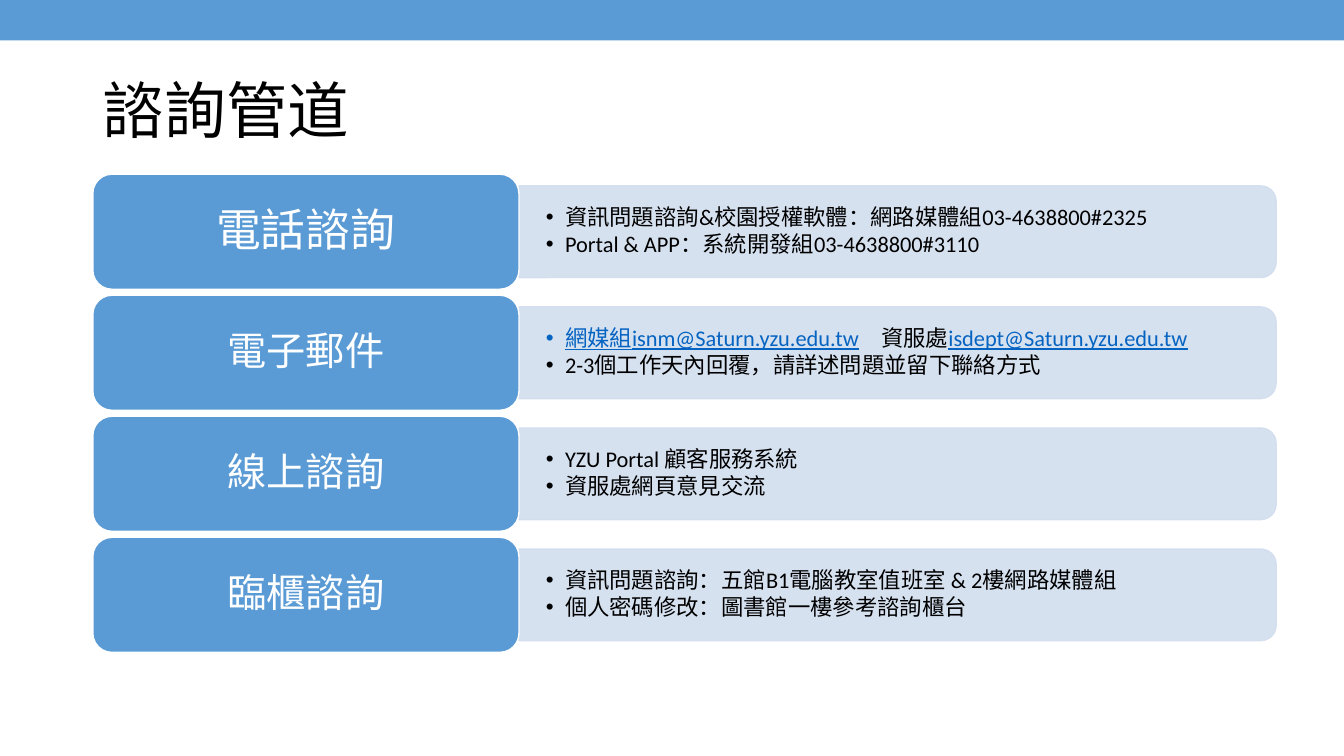
from lxml.etree import SubElement
from pptx import Presentation
from pptx.dml.color import RGBColor
from pptx.enum.shapes import MSO_SHAPE
from pptx.enum.text import MSO_ANCHOR, MSO_AUTO_SIZE, PP_ALIGN
from pptx.oxml.ns import qn
from pptx.util import Cm, Pt

COLORS = {
    "blue": "5B9BD5",
    "pale": "D2DEEF",
    "link": "0563C1",
    "black": "000000",
    "white": "FFFFFF",
}

# Each channel: name, label size, list lines; a line is a list of (text, is_link).
CHANNELS = [
    ("電話諮詢", 32, [
        [("資訊問題諮詢&校園授權軟體：網路媒體組03-4638800#2325", False)],
        [("Portal & APP：系統開發組03-4638800#3110", False)],
    ]),
    ("電子郵件", 28, [
        [("網媒組isnm@Saturn.yzu.edu.tw", True), ("　資服處", False),
         ("isdept@Saturn.yzu.edu.tw", True)],
        [("2-3個工作天內回覆，請詳述問題並留下聯絡方式", False)],
    ]),
    ("線上諮詢", 28, [
        [("YZU Portal 顧客服務系統", False)],
        [("資服處網頁意見交流", False)],
    ]),
    ("臨櫃諮詢", 28, [
        [("資訊問題諮詢：五館B1電腦教室值班室 & 2樓網路媒體組", False)],
        [("個人密碼修改：圖書館一樓參考諮詢櫃台", False)],
    ]),
]

LEFT, TOP, PITCH = Cm(2.34), Cm(4.39), Cm(3.05)
LABEL_W, LABEL_H = Cm(10.74), Cm(2.9)
PANEL_W, PANEL_H = Cm(19.08), Cm(2.31)
LIST_W, LIST_H = Cm(18.97), Cm(2.11)


def add_filled(kind, x, y, w, h, fill, line=None):
    shape = s.shapes.add_shape(kind, x, y, w, h)
    shape.shadow.inherit = False
    shape.fill.solid()
    shape.fill.fore_color.rgb = RGBColor.from_string(COLORS[fill])
    if line:
        shape.line.color.rgb = RGBColor.from_string(COLORS[line])
        shape.line.width = Pt(1)
    else:
        shape.line.fill.background()
    return shape


def style_run(r, size, color, font="Calibri"):
    r.font.name = font
    r.font.size = Pt(size)
    r.font.color.rgb = RGBColor.from_string(COLORS[color])


prs = Presentation()
prs.slide_width, prs.slide_height = Cm(33.87), Cm(19.05)
s = prs.slides.add_slide(prs.slide_layouts[5])

add_filled(MSO_SHAPE.RECTANGLE, 0, 0, prs.slide_width, Cm(1.02), "blue")

title = s.shapes.title
title.left, title.top, title.width, title.height = LEFT, Cm(1.02), Cm(29.21), Cm(3.68)
tf = title.text_frame
tf.text = "諮詢管道"
tf.auto_size = MSO_AUTO_SIZE.NONE
tf.vertical_anchor = MSO_ANCHOR.MIDDLE
p = tf.paragraphs[0]
p.alignment = PP_ALIGN.LEFT
p.line_spacing = 0.9
style_run(p.runs[0], 44, "black", "Arial")

for row, (name, size, lines) in enumerate(CHANNELS):
    y = TOP + row * PITCH
    middle = y + LABEL_H // 2
    panel_x = LEFT + LABEL_W

    # The panel stands upright and is turned so its round corners face right.
    panel = add_filled(MSO_SHAPE.ROUND_2_SAME_RECTANGLE,
                       panel_x + (PANEL_W - PANEL_H) // 2, middle - PANEL_W // 2,
                       PANEL_H, PANEL_W, "pale", "pale")
    panel.rotation = 90
    for color in panel._element.spPr.iter(qn("a:srgbClr")):
        SubElement(color, qn("a:alpha"), val="90000")

    box = s.shapes.add_textbox(panel_x, middle - LIST_H // 2, LIST_W, LIST_H)
    tf = box.text_frame
    tf.word_wrap = True
    tf.vertical_anchor = MSO_ANCHOR.MIDDLE
    tf.margin_left = tf.margin_right = Cm(0.68)
    tf.margin_top = tf.margin_bottom = Cm(0.35)
    for i, line in enumerate(lines):
        p = tf.add_paragraph() if i else tf.paragraphs[0]
        pPr = p._p.get_or_add_pPr()
        pPr.set("marL", str(Cm(0.48)))
        pPr.set("indent", str(-Cm(0.48)))
        SubElement(pPr, qn("a:buFont"), typeface="Arial")
        SubElement(pPr, qn("a:buChar"), char="•")
        p.line_spacing = 0.9
        p.space_after = Pt(2.4)
        for text, is_link in line:
            r = p.add_run()
            r.text = text
            style_run(r, 16, "link" if is_link else "black")
            r.font.underline = is_link

    label = add_filled(MSO_SHAPE.ROUNDED_RECTANGLE, LEFT, y, LABEL_W, LABEL_H,
                       "blue", "white")
    tf = label.text_frame
    tf.text = name
    tf.vertical_anchor = MSO_ANCHOR.MIDDLE
    p = tf.paragraphs[0]
    p.alignment = PP_ALIGN.CENTER
    p.line_spacing = 0.9
    style_run(p.runs[0], size, "white")

prs.save("out.pptx")
